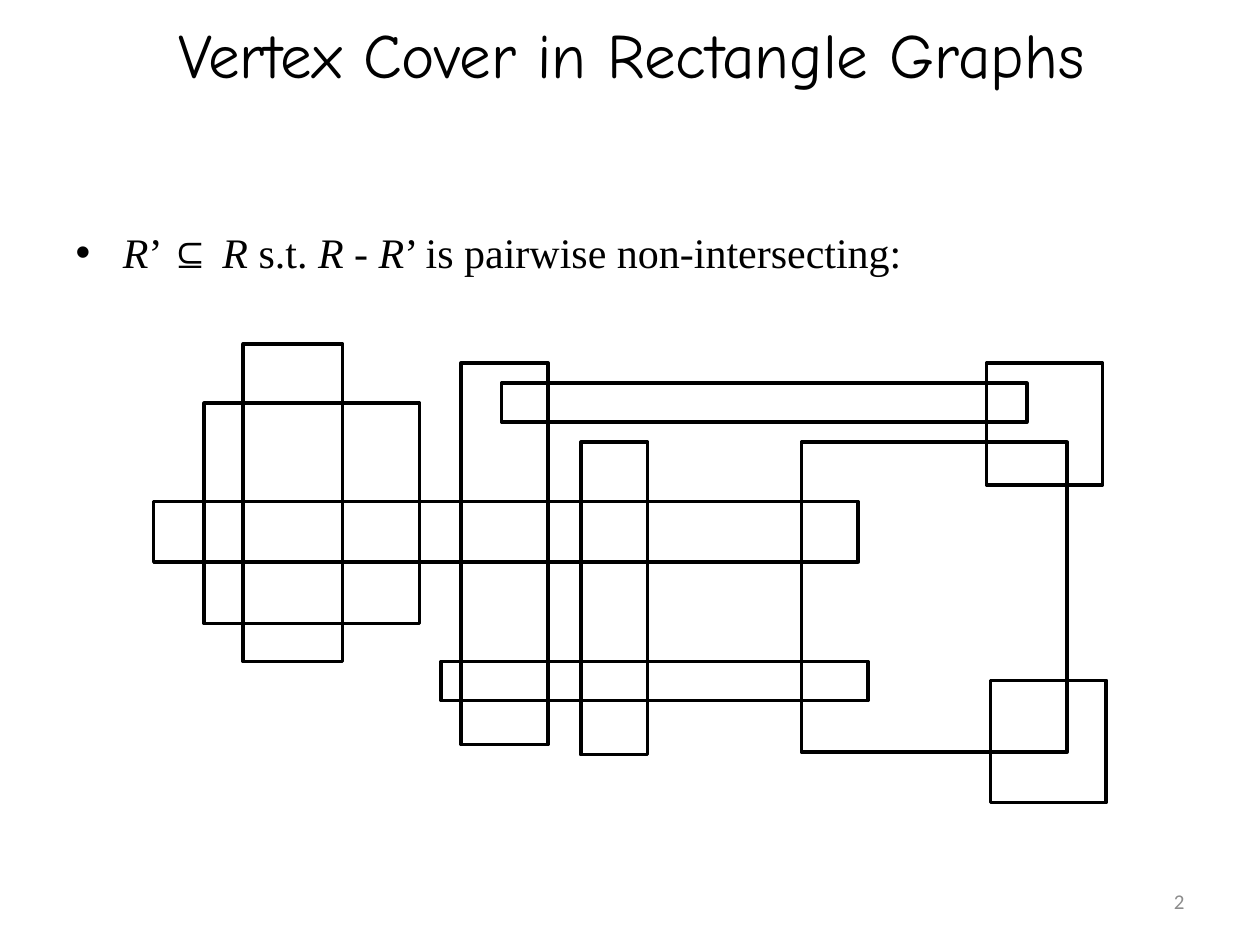
from pptx import Presentation
from pptx.dml.color import RGBColor
from pptx.enum.shapes import MSO_SHAPE
from pptx.enum.text import MSO_ANCHOR, PP_ALIGN
from pptx.util import Inches, Pt

COLORS = {"ink": "000000", "page_number": "8C8C8C"}

# left, top, width, height in inches
RECTANGLES = [
    (1.22, 3.98, 5.59, 0.48),
    (3.98, 3.04, 4.17, 0.31),
    (1.93, 2.73, 0.79, 2.52),
    (3.66, 2.88, 0.69, 3.03),
    (4.61, 3.51, 0.53, 2.48),
    (7.83, 2.88, 0.92, 0.97),
    (1.62, 3.2, 1.71, 1.75),
    (6.36, 3.51, 2.11, 2.46),
    (3.5, 5.25, 3.39, 0.31),
    (7.86, 5.4, 0.92, 0.97),
]

# text, italic
DEFINITION = [
    ("R", True),
    ("’ ⊆ ", False),
    ("R ", True),
    ("s.t. ", False),
    ("R", True),
    (" - ", False),
    ("R", True),
    ("’ is pairwise non-intersecting:", False),
]


def place(shape, left, top, width, height):
    shape.left, shape.top = Inches(left), Inches(top)
    shape.width, shape.height = Inches(width), Inches(height)


def style(paragraph, font_name, size, color):
    font = paragraph.font
    font.name, font.size = font_name, Pt(size)
    font.color.rgb = RGBColor.from_string(COLORS[color])


def fill_title(title):
    place(title, 0.51, 0, 9, 0.84)
    title.text_frame.text = "Vertex Cover in Rectangle Graphs"
    style(title.text_frame.paragraphs[0], "Comic Neue", 36, "ink")


def fill_definition(body):
    place(body, 0.5, 1.75, 8.67, 0.74)
    paragraph = body.text_frame.paragraphs[0]
    style(paragraph, "Times New Roman", 24, "ink")
    for text, italic in DEFINITION:
        run = paragraph.add_run()
        run.text = text
        run.font.italic = italic


def add_graph_rectangle(slide, bounds):
    rectangle = slide.shapes.add_shape(MSO_SHAPE.RECTANGLE, *map(Inches, bounds))
    rectangle.shadow.inherit = False
    rectangle.fill.background()
    rectangle.line.color.rgb = RGBColor.from_string(COLORS["ink"])
    rectangle.line.width = Pt(2)


def add_page_number(slide, number):
    bounds = map(Inches, (7.17, 6.95, 2.33, 0.4))
    frame = slide.shapes.add_textbox(*bounds).text_frame
    frame.word_wrap = True
    frame.vertical_anchor = MSO_ANCHOR.MIDDLE
    frame.text = number
    frame.paragraphs[0].alignment = PP_ALIGN.RIGHT
    style(frame.paragraphs[0], "Calibri", 12, "page_number")


def main():
    prs = Presentation()
    prs.slide_width, prs.slide_height = Inches(10), Inches(7.5)
    slide = prs.slides.add_slide(prs.slide_layouts[1])
    fill_title(slide.shapes.title)
    fill_definition(slide.placeholders[1])
    for bounds in RECTANGLES:
        add_graph_rectangle(slide, bounds)
    add_page_number(slide, "2")
    prs.save("out.pptx")


if __name__ == "__main__":
    main()
